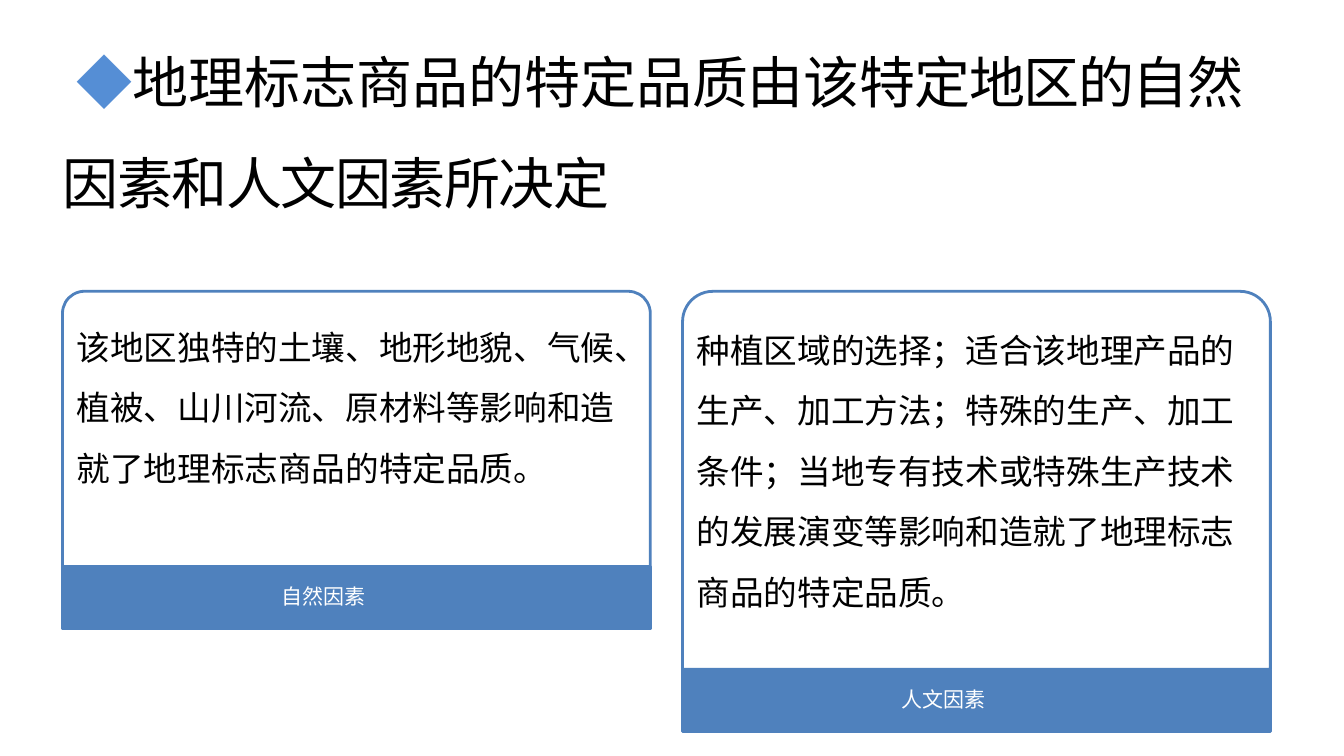
from pptx import Presentation
from pptx.dml.color import RGBColor
from pptx.enum.shapes import MSO_SHAPE
from pptx.enum.text import MSO_ANCHOR, PP_ALIGN
from pptx.util import Inches, Pt

CARD_SHAPE = MSO_SHAPE.ROUND_2_SAME_RECTANGLE
BAR_SHAPE = MSO_SHAPE.RECTANGLE
TOP, MIDDLE = MSO_ANCHOR.TOP, MSO_ANCHOR.MIDDLE
LEFT, CENTER = PP_ALIGN.LEFT, PP_ALIGN.CENTER
TITLE_ONLY = 5
CJK = "Noto Sans CJK SC"
BLUE, WHITE, BLACK, DIAMOND_BLUE = "4F81BD", "FFFFFF", "000000", "558ED5"
CARD_TOP, CARD_WIDTH, BAR_HEIGHT = 2.89, 5.83, 0.62

FACTORS = [
    (0.62, 2.73, 2.95, "自然因素",
     "该地区独特的土壤、地形地貌、气候、植被、山川河流、原材料等影响和造就了地理标志商品的特定品质。"),
    (6.77, 3.75, 2.98, "人文因素",
     "种植区域的选择；适合该地理产品的生产、加工方法；特殊的生产、加工条件；"
     "当地专有技术或特殊生产技术的发展演变等影响和造就了地理标志商品的特定品质。"),
]


def color(value):
    return RGBColor.from_string(value)


def add_span(para, text, size, fill=BLACK, font=CJK, spacing=None):
    span = para.add_run()
    span.text = text
    span.font.size = Pt(size)
    span.font.name = font
    span.font.bold = False
    span.font.color.rgb = color(fill)
    properties = span.font._element
    if spacing is not None:
        properties.set("spc", str(spacing * 100))
    east_asian = properties.makeelement(
        "{http://schemas.openxmlformats.org/drawingml/2006/main}ea", {"typeface": font})
    properties.find("{*}latin").addnext(east_asian)


def format_frame(shape, margins, anchor=TOP, align=LEFT, line_spacing=1.0):
    """Set up the text frame and return its first paragraph."""
    frame = shape.text_frame
    frame.word_wrap = True
    frame.vertical_anchor = anchor
    (frame.margin_left, frame.margin_top,
     frame.margin_right, frame.margin_bottom) = [Inches(m) for m in margins]
    para = frame.paragraphs[0]
    para.alignment = align
    para.line_spacing = line_spacing
    return para


def add_panel(slide, kind, left, top, height, fill):
    panel = slide.shapes.add_shape(
        kind, Inches(left), Inches(top), Inches(CARD_WIDTH), Inches(height))
    panel.shadow.inherit = False
    panel.fill.solid()
    panel.fill.fore_color.rgb = color(fill)
    panel.line.color.rgb = color(BLUE)
    panel.line.width = Pt(2)
    return panel


def add_factor(slide, left, height, text_top, label, body):
    card = add_panel(slide, CARD_SHAPE, left, CARD_TOP, height, WHITE)
    card.adjustments[0] = 0.08
    box = slide.shapes.add_textbox(
        Inches(left + 0.12), Inches(text_top), Inches(5.63), Inches(height - 0.6))
    para = format_frame(box, (0.02, 0.09, 0.02, 0.02), line_spacing=Pt(43.2))
    add_span(para, body, 24)
    bar = add_panel(slide, BAR_SHAPE, left, CARD_TOP + height, BAR_HEIGHT, BLUE)
    para = format_frame(bar, (0, 0, 0.66, 0), anchor=MIDDLE, align=CENTER, line_spacing=0.9)
    add_span(para, label, 15, fill=WHITE)


def set_title(slide):
    title = slide.shapes.title
    title.left, title.top = Inches(0.52), Inches(0.09)
    title.width, title.height = Inches(11.97), Inches(2.33)
    para = format_frame(title, (0.1, 0.05, 0.1, 0.05), line_spacing=Pt(72))
    add_span(para, " ◆", 40, fill=DIAMOND_BLUE, font="Times New Roman")
    add_span(para, "地理标志商品的特定品质由该", 40)
    add_span(para, "特定地区的自然因素和人文因素所决定", 40, spacing=-1)


def main():
    deck = Presentation()
    deck.slide_width, deck.slide_height = Inches(13.33), Inches(7.5)
    slide = deck.slides.add_slide(deck.slide_layouts[TITLE_ONLY])
    set_title(slide)
    for factor in FACTORS:
        add_factor(slide, *factor)
    deck.save("out.pptx")


if __name__ == "__main__":
    main()
